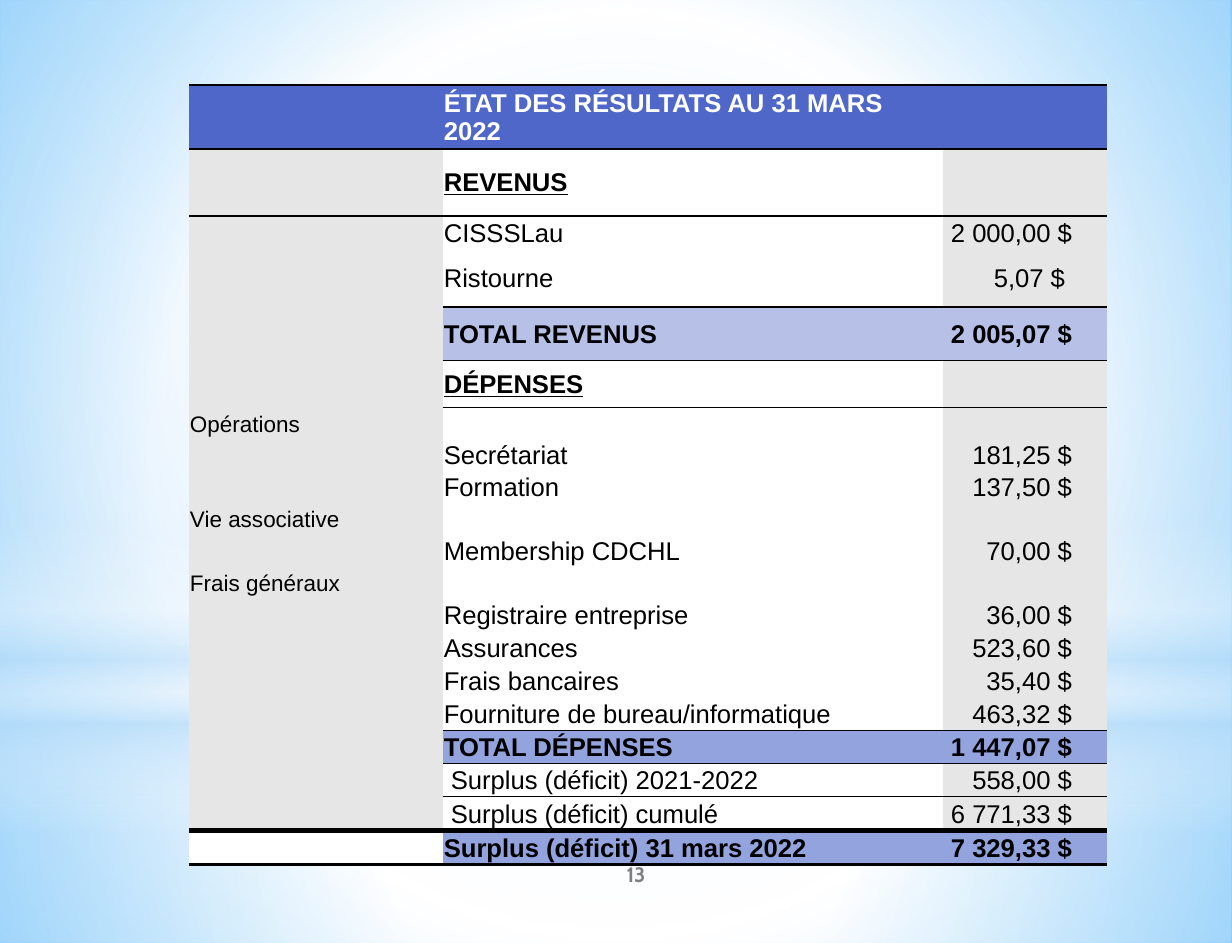
"""Build the slide showing the statement of results at 31 March 2022."""
from dataclasses import dataclass
from typing import Optional

from lxml import etree
from pptx import Presentation
from pptx.dml.color import RGBColor
from pptx.enum.shapes import MSO_SHAPE
from pptx.enum.text import MSO_ANCHOR, PP_ALIGN
from pptx.oxml import parse_xml
from pptx.oxml.ns import nsdecls, qn
from pptx.util import Emu, Pt

RECTANGLE, OVAL = MSO_SHAPE.RECTANGLE, MSO_SHAPE.OVAL
MIDDLE = MSO_ANCHOR.MIDDLE
LEFT, CENTER, RIGHT = PP_ALIGN.LEFT, PP_ALIGN.CENTER, PP_ALIGN.RIGHT

EMU_PER_PX = 7917
SLIDE_WIDTH, SLIDE_HEIGHT = 1232, 943
TABLE_LEFT, TABLE_TOP = 189, 85
COLUMN_WIDTHS = (254, 500, 164)
AMOUNT_MARGIN = 35
PLAIN_TABLE_STYLE = "{2D5ABB26-0587-4C30-8999-92F81FD0307C}"
CIRCLE = ('<a:path path="circle"><a:fillToRect l="50000" t="50000" '
          'r="50000" b="50000"/></a:path>')
DOWNWARD = '<a:lin ang="5400000" scaled="0"/>'

COLORS = {
    "header": "4E67C8",
    "side": "E6E6E6",
    "white": "FFFFFF",
    "black": "000000",
    "subtotal": "B7C1E8",
    "total": "93A3DE",
    "page_number": "7F7F7F",
    "sky": "99D4FE",
    "deep_sky": "54BDFF",
    "haze": "B4DCFA",
}


@dataclass(frozen=True)
class Stop:
    position: int
    color: str
    opacity: int = 100


@dataclass(frozen=True)
class Glow:
    preset: MSO_SHAPE
    top: int
    height: int
    stops: tuple[Stop, ...]
    direction: str = CIRCLE


@dataclass(frozen=True)
class Line:
    height: int
    label: str = ""
    amount: str = ""
    category: str = ""
    fills: tuple[str, str, str] = ("side", "white", "side")
    label_color: str = "black"
    bold: bool = False
    underline: bool = False
    indent: int = 0
    amount_shift: int = 0


@dataclass(frozen=True)
class Rule:
    width: float
    first_column: int


SKY = (Stop(0, "sky"), Stop(60, "white"), Stop(100, "deep_sky"))
GLOWS = (
    Glow(RECTANGLE, 702, 241,
         (Stop(0, "white", 91), Stop(37, "white", 76), Stop(100, "haze", 79))),
    Glow(RECTANGLE, 0, 702,
         (Stop(0, "white", 89), Stop(48, "white", 62), Stop(100, "haze", 79))),
    Glow(RECTANGLE, 519, 314,
         (Stop(0, "white", 0), Stop(29, "white", 30), Stop(45, "haze", 40),
          Stop(55, "white", 26), Stop(65, "haze", 60), Stop(100, "white", 0)),
         DOWNWARD),
    Glow(OVAL, 221, 702,
         (Stop(0, "white"), Stop(56, "white", 0), Stop(100, "white", 0))),
)

SUBTOTAL = ("side", "subtotal", "subtotal")
TOTAL = ("side", "total", "total")
LINES = (
    Line(64, "ÉTAT DES RÉSULTATS AU 31 MARS 2022", fills=("header",) * 3,
         label_color="white", bold=True),
    Line(67, "REVENUS", bold=True, underline=True),
    Line(34, "CISSSLau", "2 000,00 $"),
    Line(57, "Ristourne", "5,07 $", amount_shift=7),
    Line(54, "TOTAL REVENUS", "2 005,07 $", fills=SUBTOTAL, bold=True),
    Line(47, "DÉPENSES", bold=True, underline=True),
    Line(30, category="Opérations"),
    Line(32, "Secrétariat", "181,25 $"),
    Line(31, "Formation", "137,50 $"),
    Line(30, category="Vie associative"),
    Line(31, "Membership CDCHL", "70,00 $"),
    Line(32, category="Frais généraux"),
    Line(33, "Registraire entreprise", "36,00 $"),
    Line(33, "Assurances", "523,60 $"),
    Line(33, "Frais bancaires", "35,40 $"),
    Line(33, "Fourniture de bureau/informatique", "463,32 $"),
    Line(33, "TOTAL DÉPENSES", "1 447,07 $", fills=TOTAL, bold=True),
    Line(33, "Surplus (déficit) 2021-2022", "558,00 $", indent=7),
    Line(34, "Surplus (déficit) cumulé", "6 771,33 $", indent=7),
    Line(34, "Surplus (déficit) 31 mars 2022", "7 329,33 $",
         fills=("white", "total", "total"), bold=True),
)
RULES = {0: Rule(1.5, 0), 1: Rule(2, 0), 4: Rule(1, 1), 5: Rule(0.75, 1),
         16: Rule(0.75, 1), 17: Rule(0.75, 1), 19: Rule(4, 0), 20: Rule(2, 0)}


def px(length: int) -> Emu:
    return Emu(length * EMU_PER_PX)


def rgb(color: str) -> RGBColor:
    return RGBColor.from_string(COLORS[color])


def write(frame, text: str, *, size: int = 16, color: str = "black",
          font: str = "Arial", bold: bool = False, underline: bool = False,
          align: PP_ALIGN = LEFT) -> None:
    paragraph = frame.paragraphs[0]
    paragraph.alignment = align
    if not text:
        paragraph._p.get_or_add_endParaRPr().set("sz", str(size * 100))
        return
    run = paragraph.add_run()
    run.text = text
    run.font.size, run.font.name = Pt(size), font
    run.font.bold, run.font.underline = bold, underline
    run.font.color.rgb = rgb(color)


def apply_gradient(fill, holder, stops: tuple[Stop, ...], direction: str) -> None:
    fill.solid()
    marks = "".join(
        f'<a:gs pos="{stop.position * 1000}"><a:srgbClr val="{COLORS[stop.color]}">'
        f'<a:alpha val="{stop.opacity * 1000}"/></a:srgbClr></a:gs>'
        for stop in stops)
    gradient = parse_xml(f'<a:gradFill {nsdecls("a")} rotWithShape="1">'
                         f'<a:gsLst>{marks}</a:gsLst>{direction}</a:gradFill>')
    holder.replace(holder.find(qn("a:solidFill")), gradient)


def draw_glow(slide, glow: Glow) -> None:
    shape = slide.shapes.add_shape(glow.preset, 0, px(glow.top),
                                   px(SLIDE_WIDTH), px(glow.height))
    shape.shadow.inherit = False
    shape.line.fill.background()
    apply_gradient(shape.fill, shape.element.spPr, glow.stops, glow.direction)


def draw_borders(cell, above: Optional[Rule], below: Optional[Rule],
                 column: int) -> None:
    properties = cell._tc.get_or_add_tcPr()
    edges = [(tag, rule) for tag, rule in (("a:lnT", above), ("a:lnB", below))
             if rule and column >= rule.first_column]
    for index, (tag, rule) in enumerate(edges):
        edge = etree.Element(qn(tag), w=str(Pt(rule.width)))
        ink = etree.SubElement(edge, qn("a:solidFill"))
        etree.SubElement(ink, qn("a:srgbClr"), val=COLORS["black"])
        properties.insert(index, edge)


def draw_statement(slide) -> None:
    frame = slide.shapes.add_table(
        len(LINES), len(COLUMN_WIDTHS), px(TABLE_LEFT), px(TABLE_TOP),
        px(sum(COLUMN_WIDTHS)), px(sum(line.height for line in LINES)))
    table = frame.table
    table.first_row = table.horz_banding = False
    table._tbl.tblPr.find(qn("a:tableStyleId")).text = PLAIN_TABLE_STYLE
    for column, width in zip(table.columns, COLUMN_WIDTHS):
        column.width = px(width)
    for number, line in enumerate(LINES):
        table.rows[number].height = px(line.height)
        cells = table.rows[number].cells
        for column, cell in enumerate(cells):
            cell.fill.solid()
            cell.fill.fore_color.rgb = rgb(line.fills[column])
            cell.vertical_anchor = MIDDLE
            cell.margin_left = cell.margin_right = cell.margin_top = px(1)
            cell.margin_bottom = 0
            draw_borders(cell, RULES.get(number), RULES.get(number + 1), column)
        category, label, amount = cells
        label.margin_left = px(1 + line.indent)
        amount.margin_right = px(AMOUNT_MARGIN + line.amount_shift)
        write(category.text_frame, line.category, size=14)
        write(label.text_frame, line.label, color=line.label_color,
              bold=line.bold, underline=line.underline)
        write(amount.text_frame, line.amount, bold=line.bold, align=RIGHT)


def main() -> None:
    deck = Presentation()
    deck.slide_width, deck.slide_height = px(SLIDE_WIDTH), px(SLIDE_HEIGHT)
    slide = deck.slides.add_slide(deck.slide_layouts[6])
    sky = slide.background.fill
    apply_gradient(sky, slide.element.find(".//" + qn("p:bgPr")), SKY, CIRCLE)
    for glow in GLOWS:
        draw_glow(slide, glow)
    page_number = slide.shapes.add_textbox(px(513), px(849), px(246), px(50)).text_frame
    page_number.word_wrap = True
    page_number.vertical_anchor = MIDDLE
    write(page_number, "13", size=13, color="page_number", font="Cabin",
          bold=True, align=CENTER)
    draw_statement(slide)
    deck.save("out.pptx")


if __name__ == "__main__":
    main()
